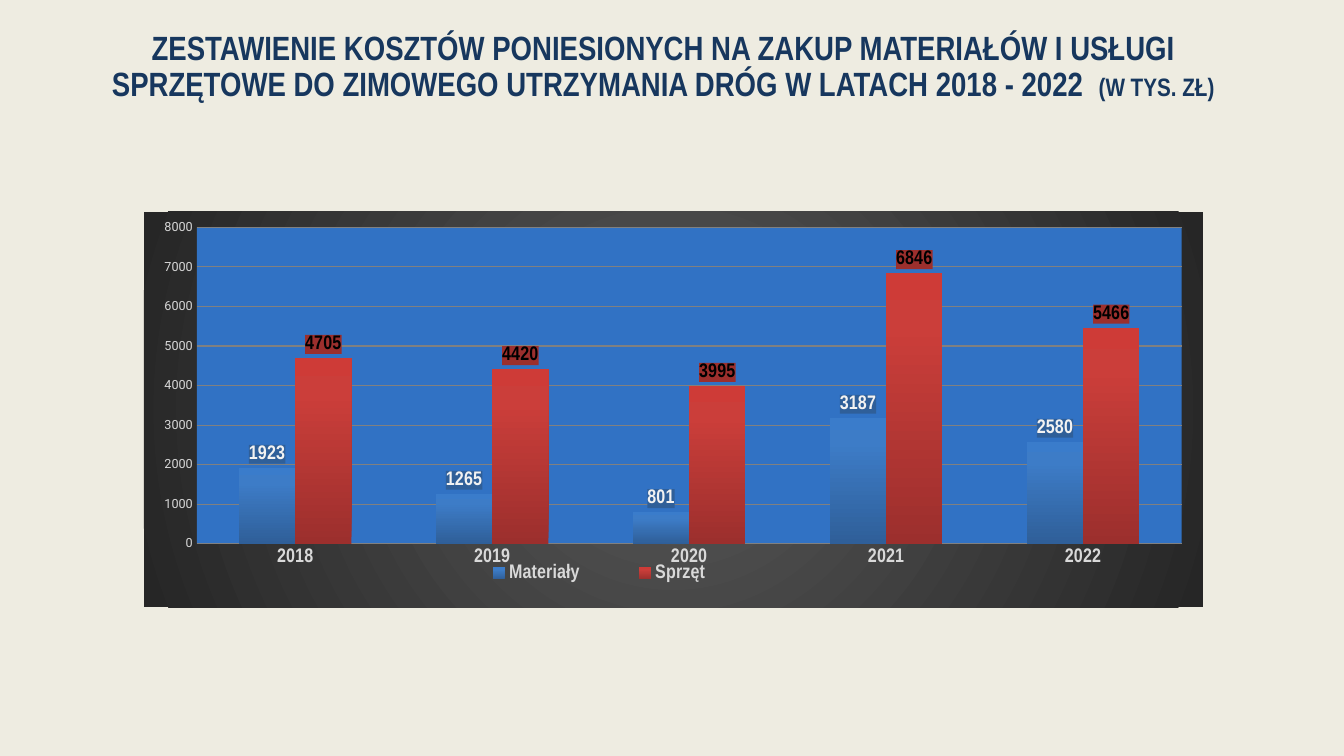
"""Builds a slide comparing winter road maintenance costs for 2018 - 2022."""
from lxml.etree import SubElement
from pptx import Presentation
from pptx.chart.data import CategoryChartData
from pptx.dml.color import RGBColor
from pptx.enum.chart import XL_CHART_TYPE, XL_LABEL_POSITION, XL_LEGEND_POSITION, XL_TICK_MARK
from pptx.enum.text import MSO_ANCHOR, MSO_AUTO_SIZE, PP_ALIGN
from pptx.oxml import parse_xml
from pptx.oxml.ns import nsdecls, qn
from pptx.util import Inches, Pt

COLORS = {
    "background": "EEECE1", "title": "17375E", "plot": "3172C4", "grid": "808080",
    "axis": "D9D9D9", "light": "F2F2F2", "black": "000000",
    "frame_center": "595959", "frame_edge": "262626",
    "blue_dark": "2F5F99", "blue_mid": "3D7CC7", "blue_light": "3A7CCB",
    "red_dark": "9C2F2D", "red_mid": "CB3E3A", "red_light": "CE3B37",
}
YEARS = ["2018", "2019", "2020", "2021", "2022"]
COSTS = [
    ("Materiały", [1923, 1265, 801, 3187, 2580], "blue", "light"),
    ("Sprzęt", [4705, 4420, 3995, 6846, 5466], "red", "black"),
]
UPWARD = '<a:lin ang="16200000" scaled="0"/>'
RADIAL = '<a:path path="circle"><a:fillToRect l="50000" t="50000" r="50000" b="50000"/></a:path>'


def rgb(name):
    return RGBColor.from_string(COLORS[name])


def style_font(font, size=14, color="axis", face="Arial Narrow", bold=True):
    font.size, font.name, font.bold = Pt(size), face, bold
    font.color.rgb = rgb(color)


def write(paragraph, text, **style):
    run = paragraph.add_run()
    run.text = text
    style_font(run.font, **style)


def solid(name):
    return f'<a:solidFill><a:srgbClr val="{COLORS[name]}"/></a:solidFill>'


def gradient(stops, direction):
    marks = "".join(
        f'<a:gs pos="{percent * 1000}"><a:srgbClr val="{COLORS[name]}"/></a:gs>'
        for percent, name in stops
    )
    return f'<a:gradFill rotWithShape="1"><a:gsLst>{marks}</a:gsLst>{direction}</a:gradFill>'


def area_style(fill):
    return parse_xml(
        f'<c:spPr {nsdecls("c", "a")}>{fill}<a:ln><a:noFill/></a:ln></c:spPr>'
    )


def manual_layout(x, y, w, h, inner=False):
    layout = parse_xml(f'<c:layout {nsdecls("c")}><c:manualLayout/></c:layout>')
    settings = [("layoutTarget", "inner")] if inner else []
    settings += [("xMode", "edge"), ("yMode", "edge"), ("x", x), ("y", y), ("w", w), ("h", h)]
    for tag, value in settings:
        SubElement(layout[0], qn(f"c:{tag}")).set("val", str(value))
    return layout


class CostSlide:
    """Holds the presentation, its only slide and the methods that fill it."""

    def __init__(self):
        self.deck = Presentation()
        self.deck.slide_width, self.deck.slide_height = Inches(13.33), Inches(7.5)
        self.slide = self.deck.slides.add_slide(self.deck.slide_layouts[5])
        self.slide.background.fill.solid()
        self.slide.background.fill.fore_color.rgb = rgb("background")

    def box(self, left, top, width, height):
        across, down = self.deck.slide_width, self.deck.slide_height
        return int(left * across), int(top * down), int(width * across), int(height * down)

    def heading(self, parts, *shares):
        title = self.slide.shapes.title
        title.left, title.top, title.width, title.height = self.box(*shares)
        frame = title.text_frame
        frame.word_wrap, frame.auto_size = True, MSO_AUTO_SIZE.NONE
        frame.vertical_anchor = MSO_ANCHOR.TOP
        line = frame.paragraphs[0]
        line.alignment, line.line_spacing = PP_ALIGN.CENTER, 0.89
        for text, size in parts:
            write(line, text, size=size, color="title")

    def cost_chart(self, *shares):
        data = CategoryChartData()
        data.categories = YEARS
        for name, values, *_ in COSTS:
            data.add_series(name, values)
        chart = self.slide.shapes.add_chart(
            XL_CHART_TYPE.COLUMN_CLUSTERED, *self.box(*shares), data
        ).chart
        chart.has_title = False
        style_font(chart.font, size=10, color="black", face="Roboto", bold=False)
        columns = chart.plots[0]
        columns.gap_width, columns.overlap, columns.vary_by_categories = 150, 0, False
        for series, (_, _, hue, label_color) in zip(columns.series, COSTS):
            self.paint_series(series, hue, label_color)
        self.axes(chart)
        self.legend(chart)
        self.areas(chart)

    def paint_series(self, series, hue, label_color):
        series.format.fill.solid()
        properties = series._element.find(qn("c:spPr"))
        stops = [(0, f"{hue}_dark"), (80, f"{hue}_mid"), (100, f"{hue}_light")]
        properties.getparent().replace(properties, area_style(gradient(stops, UPWARD)))
        labels = series.data_labels
        labels.show_value, labels.position = True, XL_LABEL_POSITION.OUTSIDE_END
        style_font(labels.font, color=label_color)
        labels._element.find(qn("c:txPr")).addprevious(area_style(solid(f"{hue}_dark")))

    def axes(self, chart):
        years, costs = chart.category_axis, chart.value_axis
        for axis in (years, costs):
            axis.major_tick_mark = axis.minor_tick_mark = XL_TICK_MARK.NONE
            axis.format.line.fill.background()
        style_font(years.tick_labels.font)
        style_font(costs.tick_labels.font, size=9, face="Roboto", bold=False)
        costs.minimum_scale, costs.maximum_scale, costs.major_unit = 0, 8000, 1000
        grid = costs.major_gridlines.format.line
        grid.color.rgb, grid.width = rgb("grid"), Pt(0.75)

    def legend(self, chart):
        chart.has_legend = True
        legend = chart.legend
        legend.position, legend.include_in_layout = XL_LEGEND_POSITION.BOTTOM, False
        style_font(legend.font)
        legend._element.find(qn("c:legendPos")).addnext(manual_layout(0.28, 0.88, 0.3, 0.07))

    def areas(self, chart):
        space = chart._chartSpace
        frame = gradient([(0, "frame_center"), (100, "frame_edge")], RADIAL)
        space.find(qn("c:chart")).addnext(area_style(frame))
        plot_area = space.find(qn("c:chart")).find(qn("c:plotArea"))
        for layout in plot_area.findall(qn("c:layout")):
            plot_area.remove(layout)
        plot_area.insert(0, manual_layout(0.05, 0.04, 0.93, 0.8, inner=True))
        plot_area.append(area_style(solid("plot")))


def main():
    page = CostSlide()
    page.heading(
        [
            ("ZESTAWIENIE KOSZTÓW PONIESIONYCH NA ZAKUP MATERIAŁÓW I USŁUGI SPRZĘTOWE "
             "DO ZIMOWEGO UTRZYMANIA DRÓG W LATACH 2018 - 2022  ", 24),
            ("(W TYS. ZŁ)", 18),
        ],
        0.057, 0.035, 0.873, 0.121,
    )
    page.cost_chart(0.107, 0.28, 0.788, 0.523)
    page.deck.save("out.pptx")


if __name__ == "__main__":
    main()
